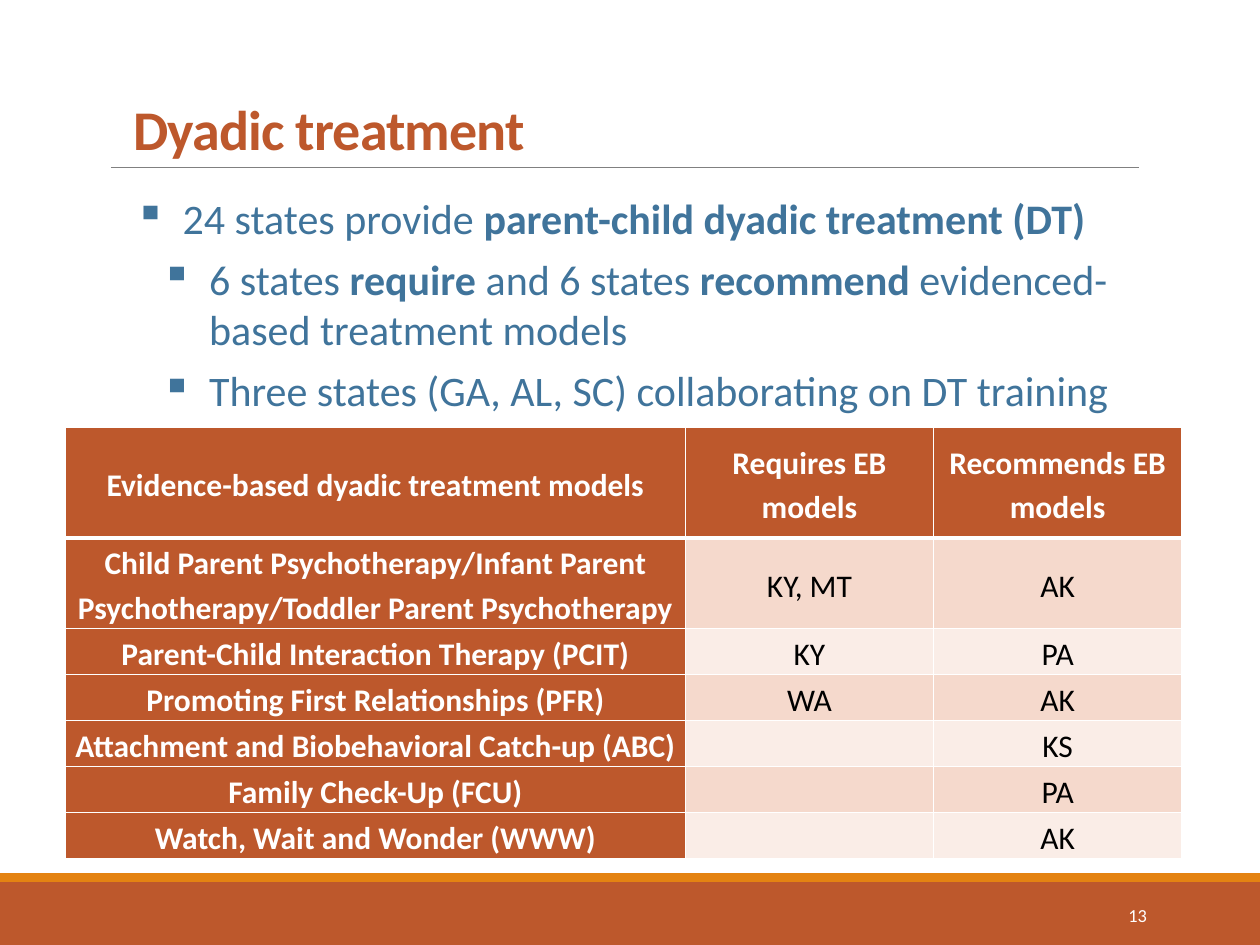
from dataclasses import dataclass

from lxml import etree
from pptx import Presentation
from pptx import util as u
from pptx.dml.color import RGBColor
from pptx.enum import shapes, text
from pptx.oxml.ns import qn


@dataclass(frozen=True)
class Theme:
    font: str = "Calibri"
    rust: str = "BD582C"
    orange: str = "E48312"
    blue: str = "40749B"
    grey: str = "808080"
    white: str = "FFFFFF"
    black: str = "000000"
    bands: tuple = ("F5D9CC", "FAEDE7")
    title_size: float = 32
    body_size: float = 24
    table_size: float = 18
    number_size: float = 10.5


class SlideBuilder:
    """Places elements on a grid of 100 columns by 75 rows."""

    COLUMNS, ROWS = 100, 75

    def __init__(self, deck, theme):
        self.theme = theme
        self.column = deck.slide_width / self.COLUMNS
        self.row = deck.slide_height / self.ROWS
        self.slide = deck.slides.add_slide(deck.slide_layouts[6])

    def place(self, left, top, width, height):
        return (round(left * self.column), round(top * self.row),
                round(width * self.column), round(height * self.row))

    def style(self, run, size, color, bold=False):
        run.font.name = self.theme.font
        run.font.size = u.Pt(size)
        run.font.bold = bold
        run.font.color.rgb = RGBColor.from_string(color)

    def paint(self, fill, color):
        fill.solid()
        fill.fore_color.rgb = RGBColor.from_string(color)

    def band(self, area, color):
        band = self.slide.shapes.add_shape(shapes.MSO_SHAPE.RECTANGLE, *self.place(*area))
        band.shadow.inherit = False
        self.paint(band.fill, color)
        band.line.fill.background()

    def rule(self, left, right, level, color):
        x, y, length, _ = self.place(left, level, right - left, 0)
        rule = self.slide.shapes.add_connector(
            shapes.MSO_CONNECTOR.STRAIGHT, x, y, x + length, y)
        rule.line.width = u.Pt(1)
        rule.line.color.rgb = RGBColor.from_string(color)
        etree.SubElement(rule._element.spPr, qn("a:effectLst"))

    def frame(self, area, anchor):
        frame = self.slide.shapes.add_textbox(*self.place(*area)).text_frame
        frame.word_wrap = True
        frame.vertical_anchor = anchor
        return frame

    def label(self, area, words, size, color, anchor, align, bold=False, tracking=0):
        frame = self.frame(area, anchor)
        frame.text = words
        line = frame.paragraphs[0]
        line.alignment = align
        self.style(line.runs[0], size, color, bold)
        if tracking:
            line.runs[0].font._element.set("spc", str(round(tracking * 100)))

    def bullets(self, area, items):
        """Each item is an indent in columns and a list of (words, bold) parts."""
        frame = self.frame(area, text.MSO_ANCHOR.TOP)
        frame.margin_left = frame.margin_right = 0
        for index, (indent, parts) in enumerate(items):
            line = frame.add_paragraph() if index else frame.paragraphs[0]
            line.space_after = u.Pt(6)
            for words, bold in parts:
                run = line.add_run()
                run.text = words
                self.style(run, self.theme.body_size, self.theme.blue, bold)
            props = line._p.get_or_add_pPr()
            props.set("marL", str(round(indent * self.column)))
            props.set("indent", str(round(-3.8 * self.column)))
            etree.SubElement(props, qn("a:buChar")).set("char", "▪")

    def borders(self, cell, top, bottom):
        props = cell._tc.get_or_add_tcPr()
        for side, width in (("L", 1), ("R", 1), ("T", top), ("B", bottom)):
            edge = etree.SubElement(props, qn(f"a:ln{side}"), w=str(u.Pt(width)))
            fill = etree.SubElement(edge, qn("a:solidFill"))
            etree.SubElement(fill, qn("a:srgbClr"), val=self.theme.white)

    def cell(self, cell, words, fill, color, bold):
        self.paint(cell.fill, fill)
        cell.vertical_anchor = text.MSO_ANCHOR.MIDDLE
        cell.margin_left = cell.margin_right = u.Inches(0.07)
        cell.margin_top = cell.margin_bottom = 0
        cell.text = words
        line = cell.text_frame.paragraphs[0]
        line.alignment = text.PP_ALIGN.CENTER
        line.line_spacing = 1.15
        line.font.size = u.Pt(self.theme.table_size)
        for run in line.runs:
            self.style(run, self.theme.table_size, color, bold)

    def table(self, left, top, widths, heights, rows):
        area = self.place(left, top, sum(widths), sum(heights))
        table = self.slide.shapes.add_table(len(rows), len(widths), *area).table
        for column, width in zip(table.columns, widths):
            column.width = round(width * self.column)
        for row, height in zip(table.rows, heights):
            row.height = round(height * self.row)
        for r, row in enumerate(rows):
            for c, words in enumerate(row):
                heading = r == 0 or c == 0
                cell = table.cell(r, c)
                self.borders(cell, top=3 if r == 1 else 1, bottom=3 if r == 0 else 1)
                self.cell(cell, words,
                          self.theme.rust if heading else self.theme.bands[(r - 1) % 2],
                          self.theme.white if heading else self.theme.black, heading)


def main():
    deck = Presentation()
    deck.slide_width, deck.slide_height = u.Inches(10), u.Inches(7.5)
    theme = Theme()
    page = SlideBuilder(deck, theme)

    # Footer with slide number
    page.band((0, 70, 100, 5), theme.rust)
    page.band((0, 69.3, 100, 0.7), theme.orange)
    page.label((81.2, 70.6, 10.8, 4), "13", theme.number_size, theme.white,
               text.MSO_ANCHOR.MIDDLE, text.PP_ALIGN.RIGHT)

    # Title and the rule below it
    page.label((9.6, 1, 80.8, 12.3), "Dyadic treatment", theme.title_size, theme.rust,
               text.MSO_ANCHOR.BOTTOM, text.PP_ALIGN.LEFT, bold=True, tracking=-0.5)
    page.rule(8.8, 90.4, 13.3, theme.grey)

    # Key findings
    main_point, sub_point = 5.7, 7.8
    page.bullets((8.8, 14.8, 82.5, 45), [
        (main_point, [("24 states provide ", False),
                      ("parent-child dyadic treatment (DT)", True)]),
        (sub_point, [("6 states ", False), ("require", True),
                     (" and 6 states ", False), ("recommend", True),
                     (" evidenced-based treatment models", False)]),
        (sub_point, [("Three states (GA, AL, SC) collaborating on DT training", False)]),
    ])

    # Models by state
    models = [
        ("Evidence-based dyadic treatment models", "Requires EB models",
         "Recommends EB models"),
        ("Child Parent Psychotherapy/Infant Parent Psychotherapy/"
         "Toddler Parent Psychotherapy", "KY, MT", "AK"),
        ("Parent-Child Interaction Therapy (PCIT)", "KY", "PA"),
        ("Promoting First Relationships (PFR)", "WA", "AK"),
        ("Attachment and Biobehavioral Catch-up (ABC)", "", "KS"),
        ("Family Check-Up (FCU)", "", "PA"),
        ("Watch, Wait and Wonder (WWW)", "", "AK"),
    ]
    page.table(5.2, 33.9, [49.2, 19.7, 19.7], [8.8, 7.2] + [3.65] * 5, models)

    deck.save("out.pptx")


if __name__ == "__main__":
    main()
